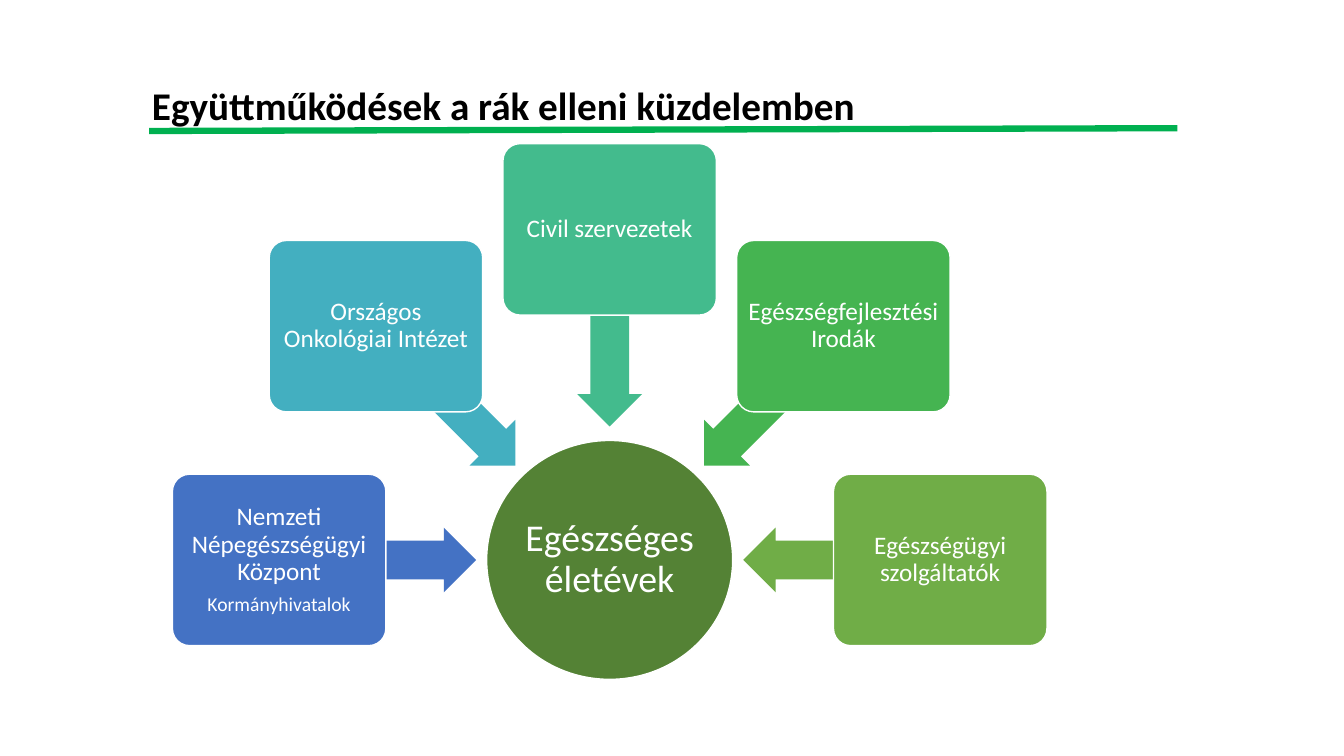
import math

from lxml import etree
from pptx import Presentation
from pptx.dml.color import RGBColor
from pptx.enum import shapes, text
from pptx.oxml import ns
from pptx.util import Cm, Pt

FONT = "Calibri"
COLORS = {
    "black": "000000",
    "white": "FFFFFF",
    "rule": "00B050",
    "hub": "548235",
    "blue": "4472C4",
    "teal": "43AFC0",
    "mint": "43BB8D",
    "green": "45B451",
    "olive": "70AD47",
}
# Clockwise from the left: colour and (text, size) paragraphs
PARTNERS = [
    ("blue", [("Nemzeti Népegészségügyi Központ", 18), ("Kormányhivatalok", 14)]),
    ("teal", [("Országos Onkológiai Intézet", 18)]),
    ("mint", [("Civil szervezetek", 18)]),
    ("green", [("Egészségfejlesztési Irodák", 18)]),
    ("olive", [("Egészségügyi szolgáltatók", 18)]),
]
PARTNER_RADIUS, ARROW_RADIUS = 8.33, 5.85
PARTNER_SIZE, ARROW_SIZE, HUB_SIZE = (5.38, 4.32), (4.97, 1.63), (6.2, 6.02)


def color(name):
    return RGBColor.from_string(COLORS[name])


def add_run(paragraph, words, size, color_name, bold=False):
    run = paragraph.add_run()
    run.text = words
    run.font.name = FONT
    run.font.size = Pt(size)
    run.font.bold = bold
    run.font.color.rgb = color(color_name)
    paragraph.line_spacing = 0.9


def add_centred_shape(slide, kind, centre, size, fill, outlined=True):
    """Place a filled shape by its centre, all lengths in centimetres."""
    (x, y), (width, height) = centre, size
    shape = slide.shapes.add_shape(
        kind, Cm(x - width / 2), Cm(y - height / 2), Cm(width), Cm(height))
    shape.shadow.inherit = False
    shape.fill.solid()
    shape.fill.fore_color.rgb = color(fill)
    if outlined:
        shape.line.color.rgb = color("white")
        shape.line.width = Pt(1)
    else:
        shape.line.fill.background()
    return shape


def write_label(shape, lines, inset):
    frame = shape.text_frame
    frame.word_wrap = True
    frame.vertical_anchor = text.MSO_ANCHOR.MIDDLE
    frame.margin_left = frame.margin_right = Cm(inset)
    frame.margin_top = frame.margin_bottom = Cm(inset)
    for index, (words, size) in enumerate(lines):
        paragraph = frame.add_paragraph() if index else frame.paragraphs[0]
        paragraph.alignment = text.PP_ALIGN.CENTER
        paragraph.space_after = Pt(size * 0.35)
        add_run(paragraph, words, size, "white")


def add_heading(slide, left, top, width, height):
    box = slide.shapes.add_textbox(Cm(left), Cm(top), Cm(width), Cm(height))
    frame = box.text_frame
    frame.word_wrap = True
    frame.vertical_anchor = text.MSO_ANCHOR.MIDDLE
    add_run(frame.paragraphs[0], "Együttműködések a rák elleni küzdelemben",
            28, "black", bold=True)

    rule = slide.shapes.add_connector(
        shapes.MSO_CONNECTOR.STRAIGHT, Cm(left + 0.18), Cm(top + 1.57),
        Cm(left + 26.09), Cm(top + 1.5))
    rule.line.color.rgb = color("rule")
    rule.line.width = Pt(4.5)
    etree.SubElement(rule._element.spPr, ns.qn("a:effectLst"))


def add_partner_wheel(slide, left, top, width, height):
    """Hub at the bottom centre, partners on a half circle pointing at it."""
    hub_x = left + width / 2
    hub_y = top + height - HUB_SIZE[1] / 2

    def around_hub(radius, degrees):
        angle = math.radians(degrees)
        return hub_x + radius * math.cos(angle), hub_y + radius * math.sin(angle)

    hub = add_centred_shape(
        slide, shapes.MSO_SHAPE.OVAL, (hub_x, hub_y), HUB_SIZE, "hub")
    write_label(hub, [("Egészséges életévek", 27)], 0.05)

    step = 180 / (len(PARTNERS) - 1)
    for index, (fill, lines) in enumerate(PARTNERS):
        degrees = 180 + index * step
        arrow = add_centred_shape(
            slide, shapes.MSO_SHAPE.LEFT_ARROW, around_hub(ARROW_RADIUS, degrees),
            ARROW_SIZE, fill, outlined=False)
        arrow.adjustments[0] = 0.6
        arrow.adjustments[1] = 0.5
        arrow.rotation = degrees % 360
        partner = add_centred_shape(
            slide, shapes.MSO_SHAPE.ROUNDED_RECTANGLE,
            around_hub(PARTNER_RADIUS, degrees), PARTNER_SIZE, fill)
        partner.adjustments[0] = 0.1
        write_label(partner, lines, 0.1)


def main():
    presentation = Presentation()
    presentation.slide_width = Cm(33.87)
    presentation.slide_height = Cm(19.05)
    slide = presentation.slides.add_slide(presentation.slide_layouts[6])
    add_heading(slide, 3.58, 1.73, 25.25, 1.98)
    add_partner_wheel(slide, 4.34, 3.63, 22.05, 13.49)
    presentation.save("out.pptx")


if __name__ == "__main__":
    main()
